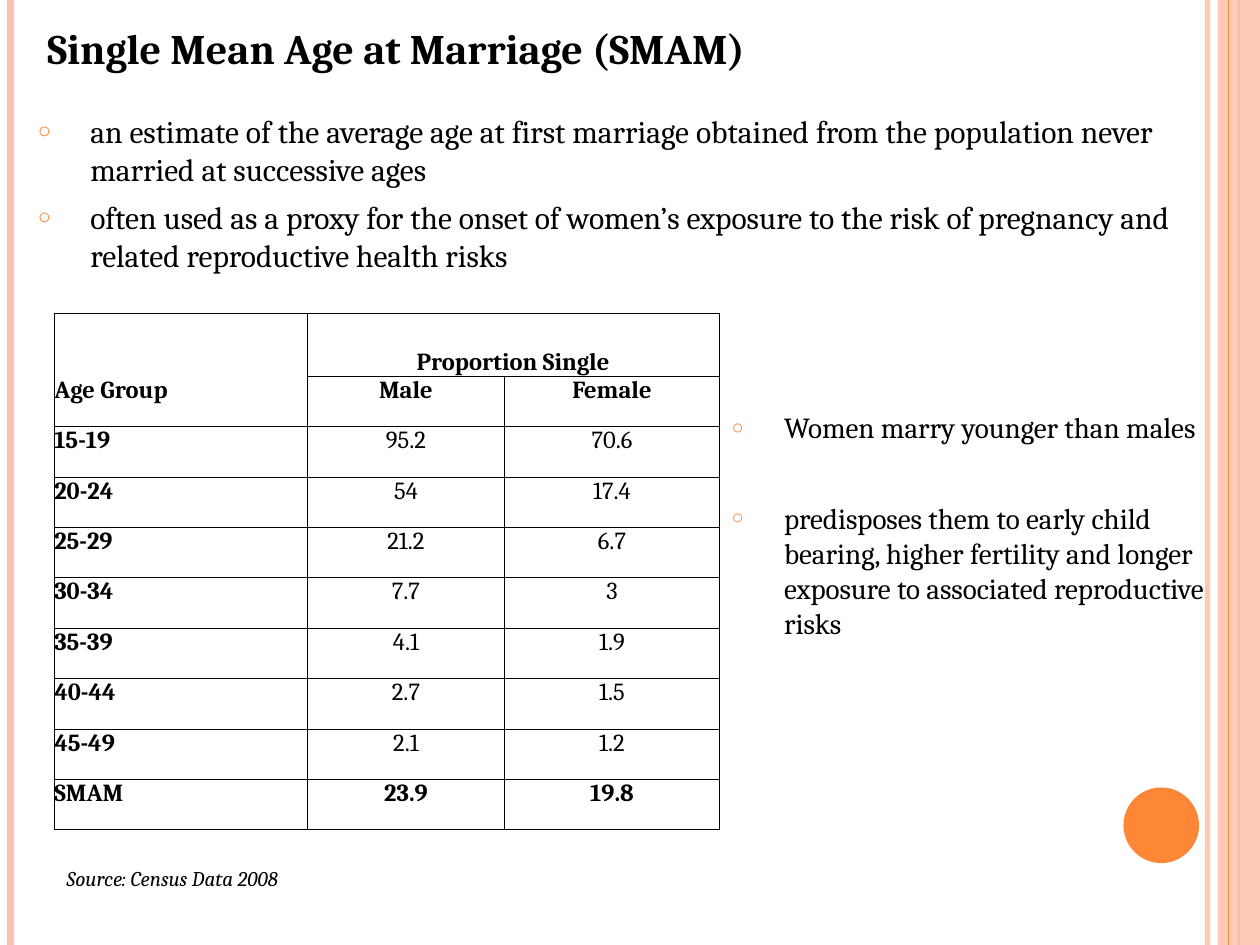
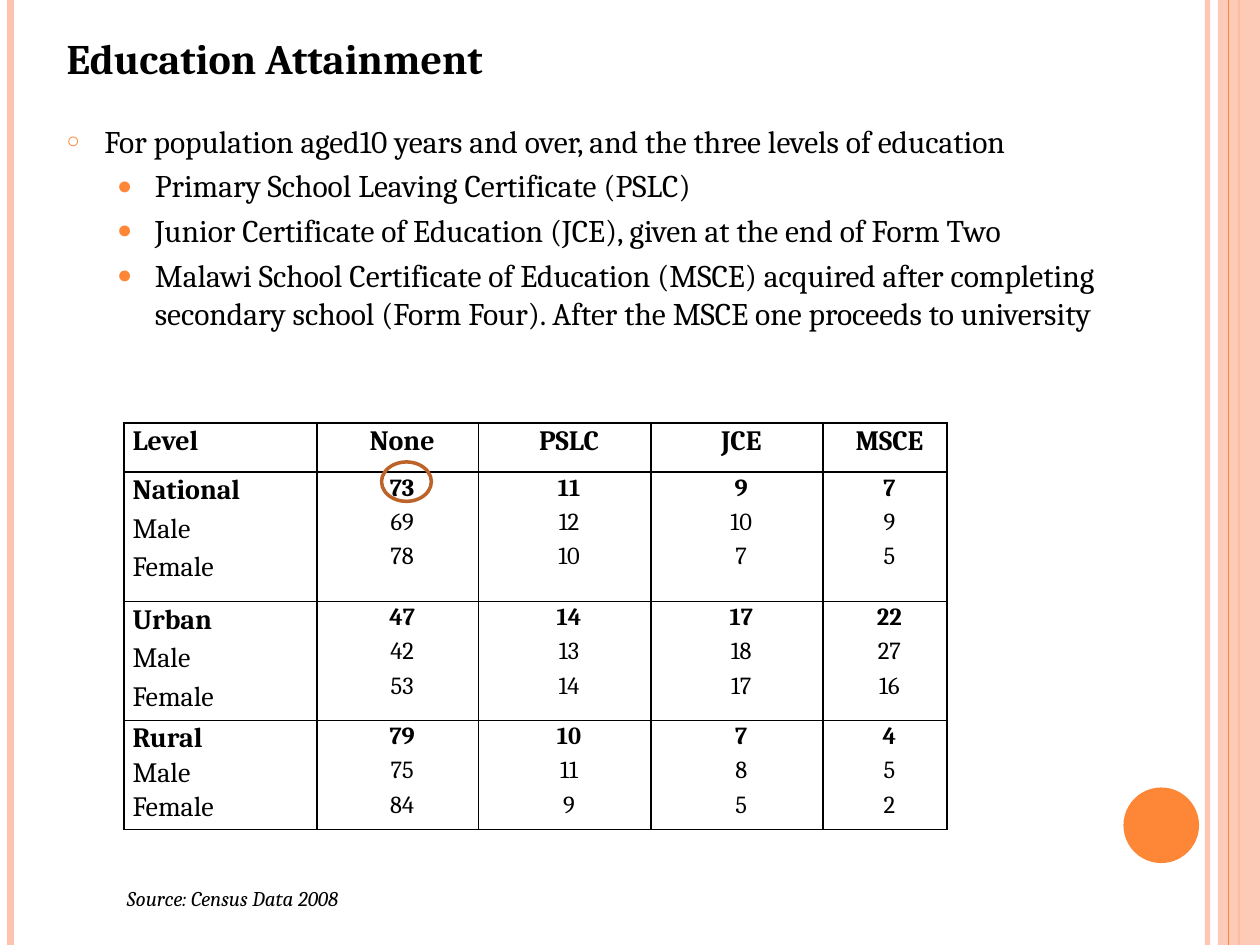
from lxml import etree
from pptx import Presentation
from pptx.dml.color import RGBColor
from pptx.enum.shapes import MSO_CONNECTOR, MSO_SHAPE
from pptx.enum.text import MSO_ANCHOR, PP_ALIGN
from pptx.oxml.ns import qn
from pptx.util import Pt

LEFT, CENTER = PP_ALIGN.LEFT, PP_ALIGN.CENTER
BOTTOM, TOP = MSO_ANCHOR.BOTTOM, MSO_ANCHOR.TOP
STRAIGHT = MSO_CONNECTOR.STRAIGHT
RECTANGLE, OVAL = MSO_SHAPE.RECTANGLE, MSO_SHAPE.OVAL

FONT = "Cambria"
WIDTH, HEIGHT = 720, 540
COLORS = {"text": "000000", "orange": "FE8637", "peach": "FEC3AE", "ring": "BC6329"}
BULLETS = {"○": 70, "●": 80}
SOURCE = "Source: Census Data 2008"

MARRIAGE_TITLE = "Single Mean Age at Marriage (SMAM)"
MARRIAGE_POINTS = [
    "an estimate of the average age at first marriage obtained from the population never married at successive ages",
    "often used as a proxy for the onset of women’s exposure to the risk of pregnancy and related reproductive health risks",
]
MARRIAGE_FINDINGS = [
    "Women marry younger than males",
    "predisposes them to early child bearing, higher fertility and longer exposure to associated reproductive risks",
]
MARRIAGE_ROWS = [
    ("", "Proportion Single", ""),
    ("Age Group", "Male", "Female"),
    ("15-19", "95.2", "70.6"),
    ("20-24", "54", "17.4"),
    ("25-29", "21.2", "6.7"),
    ("30-34", "7.7", "3"),
    ("35-39", "4.1", "1.9"),
    ("40-44", "2.7", "1.5"),
    ("45-49", "2.1", "1.2"),
    ("SMAM", "23.9", "19.8"),
]

EDUCATION_TITLE = "Education Attainment"
EDUCATION_INTRO = "For population aged10 years and over, and the three levels of education"
EDUCATION_LEVELS = [
    "Primary School Leaving Certificate (PSLC)",
    "Junior Certificate of Education (JCE), given at the end of Form Two",
    "Malawi School Certificate of Education (MSCE) acquired after completing secondary school (Form Four). "
    "After the MSCE one proceeds to university",
]
EDUCATION_HEADER = ("Level", "None", "PSLC", "JCE", "MSCE")
EDUCATION_AREAS = {
    "National": [(73, 69, 78), (11, 12, 10), (9, 10, 7), (7, 9, 5)],
    "Urban": [(47, 42, 53), (14, 13, 14), (17, 18, 17), (22, 27, 16)],
    "Rural": [(79, 75, 84), (10, 11, 9), (7, 8, 5), (4, 5, 2)],
}


def rgb(name):
    return RGBColor.from_string(COLORS[name])


def set_alpha(element, percent):
    color = element.find(".//" + qn("a:srgbClr"))
    etree.SubElement(color, qn("a:alpha"), val=str(percent * 1000))


def style_text(para, size, bold=False, italic=False):
    for span in para.runs:
        span.font.name = FONT
        span.font.size = Pt(size)
        span.font.bold = bold
        span.font.italic = italic
        span.font.color.rgb = rgb("text")


def add_rail(page, x, color, weight, alpha=100):
    rail = page.shapes.add_connector(STRAIGHT, Pt(x), 0, Pt(x), Pt(HEIGHT))
    rail.line.color.rgb = rgb(color)
    rail.line.width = Pt(weight)
    properties = rail._element.spPr
    if alpha < 100:
        set_alpha(properties, alpha)
    etree.SubElement(properties, qn("a:effectLst"))


def add_solid(page, kind, left, top, width, height, color):
    shape = page.shapes.add_shape(kind, Pt(left), Pt(top), Pt(width), Pt(height))
    shape.shadow.inherit = False
    shape.fill.solid()
    shape.fill.fore_color.rgb = rgb(color)
    shape.line.fill.background()
    return shape


def add_page(deck):
    page = deck.slides.add_slide(deck.slide_layouts[6])
    add_rail(page, 690, "peach", 3, 93)
    add_rail(page, 6, "peach", 4.5)
    add_rail(page, 708, "orange", 1.5)
    band = add_solid(page, RECTANGLE, 696, 0, WIDTH - 696, HEIGHT, "peach")
    set_alpha(band._element.spPr, 87)
    add_rail(page, 702, "orange", 0.75)
    add_solid(page, OVAL, 642, 450, 43.2, 43.2, "orange")
    return page


def add_box(page, left, top, width, height):
    box = page.shapes.add_textbox(Pt(left), Pt(top), Pt(width), Pt(height))
    box.text_frame.word_wrap = True
    return box.text_frame


def add_label(page, text, left, top, width, height, size, **look):
    frame = add_box(page, left, top, width, height)
    frame.text = text
    style_text(frame.paragraphs[0], size, **look)


def add_title(page, text, left, top):
    add_label(page, text, left, top, 487, 36, 24, bold=True)


def add_source(page, left, top):
    add_label(page, SOURCE, left, top, 160, 21.5, 12, italic=True)


def add_bullets(page, items, left, top, width, height, size):
    frame = add_box(page, left, top, width, height)
    for index, (text, mark, margin, hanging, space) in enumerate(items):
        para = frame.paragraphs[0] if index == 0 else frame.add_paragraph()
        para.text = text
        para.space_before = Pt(space)
        style_text(para, size)
        properties = para._p.get_or_add_pPr()
        properties.set("marL", str(Pt(margin)))
        properties.set("indent", str(Pt(-hanging)))
        color = etree.SubElement(properties, qn("a:buClr"))
        etree.SubElement(color, qn("a:srgbClr"), val=COLORS["orange"])
        etree.SubElement(properties, qn("a:buSzPct"), val=str(BULLETS[mark] * 1000))
        etree.SubElement(properties, qn("a:buFont"), typeface="Arial")
        etree.SubElement(properties, qn("a:buChar"), char=mark)


def set_borders(cell, weight, hidden=""):
    properties = cell._tc.get_or_add_tcPr()
    for index, side in enumerate("LRTB"):
        line = etree.Element(qn("a:ln" + side), w=str(Pt(weight)))
        if side in hidden:
            etree.SubElement(line, qn("a:noFill"))
        else:
            fill = etree.SubElement(line, qn("a:solidFill"))
            etree.SubElement(fill, qn("a:srgbClr"), val=COLORS["text"])
        properties.insert(index, line)


def add_grid(page, left, top, widths, heights):
    frame = page.shapes.add_table(len(heights), len(widths), Pt(left), Pt(top),
                                  Pt(sum(widths)), Pt(sum(heights)))
    grid = frame.table
    grid.first_row = grid.horz_banding = False
    for column, width in zip(grid.columns, widths):
        column.width = Pt(width)
    for row, height in zip(grid.rows, heights):
        row.height = Pt(height)
    for cell in grid.iter_cells():
        cell.margin_left = cell.margin_right = cell.margin_top = cell.margin_bottom = 0
        cell.vertical_anchor = TOP
        cell.fill.background()
    return grid


def build_marriage(deck):
    page = add_page(deck)
    add_title(page, MARRIAGE_TITLE, 20, 9.5)
    points = [(text, "○", 30, 30, 6) for text in MARRIAGE_POINTS]
    add_bullets(page, points, 14.5, 60.5, 669, 113, 18)

    grid = add_grid(page, 31, 179, (144.5, 113, 122.5), [36] + [28.8] * 9)
    last = len(MARRIAGE_ROWS) - 1
    hidden_sides = {(0, 0): "B", (1, 0): "T"}
    for r, values in enumerate(MARRIAGE_ROWS):
        for c, value in enumerate(values):
            cell = grid.cell(r, c)
            cell.text = value
            para = cell.text_frame.paragraphs[0]
            para.alignment = CENTER if c else LEFT
            style_text(para, 14, bold=c == 0 or r in (0, 1, last))
            set_borders(cell, 0.5, hidden_sides.get((r, c), ""))
    grid.cell(0, 1).merge(grid.cell(0, 2))
    grid.cell(0, 1).vertical_anchor = BOTTOM

    findings = [(text, "○", 30, 30, 32) for text in MARRIAGE_FINDINGS]
    add_bullets(page, findings, 411, 230.5, 284, 153, 16.6)
    add_source(page, 31, 491)


def build_education(deck):
    page = add_page(deck)
    intro = [(EDUCATION_INTRO, "○", 21.6, 21.6, 6)]
    levels = [(text, "●", 50.4, 21.6, 4) for text in EDUCATION_LEVELS]
    add_bullets(page, intro + levels, 31, 66, 657, 158, 18)
    add_title(page, EDUCATION_TITLE, 31, 15)

    grid = add_grid(page, 70.8, 241.8, (110.3, 92.4, 98.4, 98.4, 71), (28, 74, 68, 62.4))
    rows = [[(name,) for name in EDUCATION_HEADER]]
    rows += [[(area, "Male", "Female")] + columns for area, columns in EDUCATION_AREAS.items()]
    for r, row in enumerate(rows):
        for c, lines in enumerate(row):
            cell = grid.cell(r, c)
            cell.text = "\n".join(str(line) for line in lines)
            tight = lines[0] == "Rural"
            for index, para in enumerate(cell.text_frame.paragraphs):
                para.alignment = CENTER if c else LEFT
                para.line_spacing = 1.07
                para.space_before = Pt(0 if tight and index else 2.4)
                para._p.get_or_add_pPr().set("marL", str(Pt(5)))
                style_text(para, 14 if r and c else 16, bold=index == 0)
            set_borders(cell, 1)

    add_source(page, 65.5, 502.5)
    ring = page.shapes.add_shape(OVAL, Pt(218), Pt(264), Pt(28.5), Pt(22.5))
    ring.shadow.inherit = False
    ring.fill.background()
    ring.line.color.rgb = rgb("ring")
    ring.line.width = Pt(2)


def main():
    deck = Presentation()
    deck.slide_width, deck.slide_height = Pt(WIDTH), Pt(HEIGHT)
    build_marriage(deck)
    build_education(deck)
    deck.save("out.pptx")


if __name__ == "__main__":
    main()
